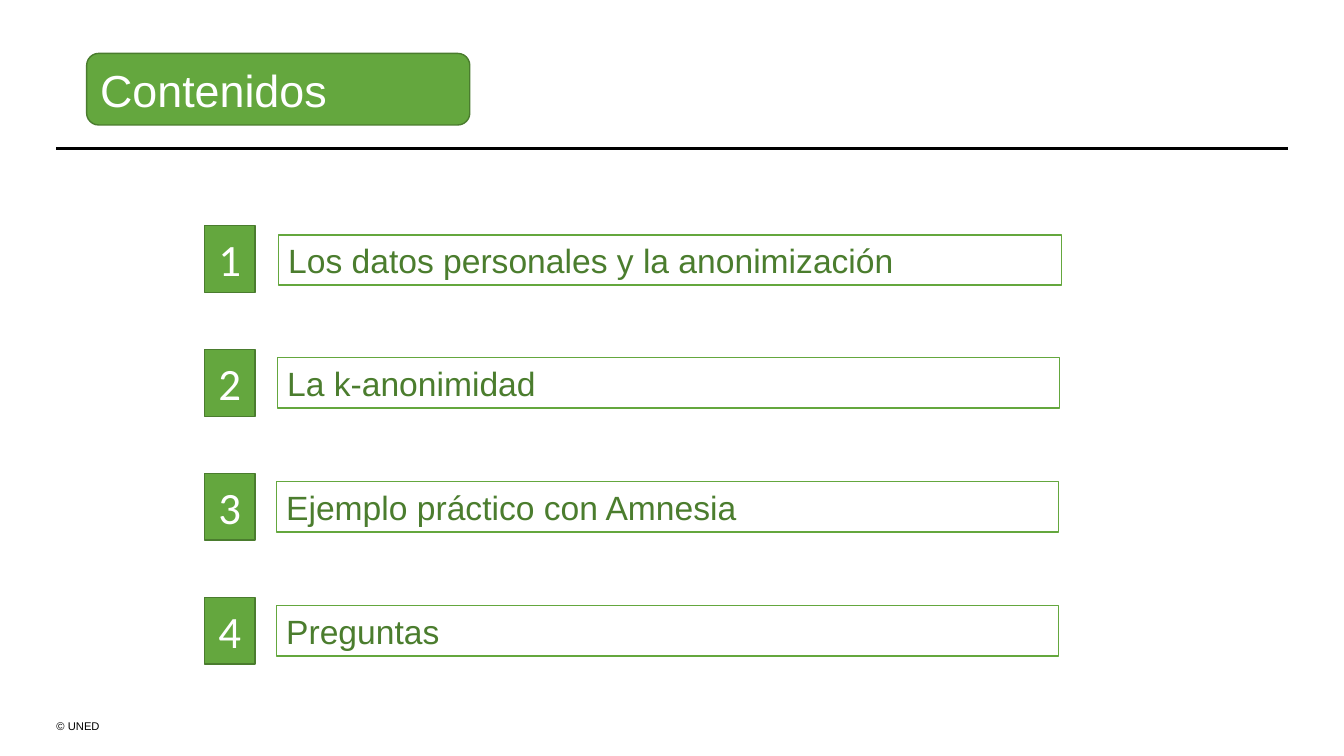
from dataclasses import dataclass

import pptx
import pptx.dml.color
import pptx.enum.shapes
import pptx.enum.text
import pptx.oxml.ns
import pptx.util
from lxml import etree
from pptx.util import Inches

Shape = pptx.enum.shapes.MSO_SHAPE
Anchor = pptx.enum.text.MSO_ANCHOR
Align = pptx.enum.text.PP_ALIGN


@dataclass(frozen=True)
class Theme:
    green: str = "64A73E"
    dark_green: str = "4A7C2E"
    topic_text: str = "4B7D2E"
    white: str = "FFFFFF"
    black: str = "000000"
    body_font: str = "Arial"
    number_font: str = "Calibri"
    title_size: int = 32
    topic_size: int = 24
    footer_size: int = 8
    border: float = 1
    rule: float = 2


THEME = Theme()

TOPICS = [
    ("Los datos personales y la anonimización", 0.73, 0.09, 7.77),
    ("La k-anonimidad", 0.72, 0.08, 7.76),
    ("Ejemplo práctico con Amnesia", 0.71, 0.08, 7.76),
    ("Preguntas", 0.71, 0.08, 7.76),
]


def rgb(color):
    return pptx.dml.color.RGBColor.from_string(color)


def write(frame, text, size, color, font=THEME.body_font, align=Align.LEFT, anchor=Anchor.TOP):
    frame.word_wrap = True
    frame.vertical_anchor = anchor
    paragraph = frame.paragraphs[0]
    paragraph.alignment = align
    run = paragraph.add_run()
    run.text = text
    run.font.name = font
    run.font.size = pptx.util.Pt(size)
    run.font.color.rgb = rgb(color)


def add_box(slide, preset, left, top, width, height, fill, border):
    box = slide.shapes.add_shape(preset, left, top, width, height)
    box.shadow.inherit = False
    box.fill.solid()
    box.fill.fore_color.rgb = rgb(fill)
    box.line.color.rgb = rgb(border)
    box.line.width = pptx.util.Pt(THEME.border)
    return box


def add_header(slide, left, top, width):
    rule_top = top + Inches(0.94)
    rule = slide.shapes.add_connector(
        pptx.enum.shapes.MSO_CONNECTOR.STRAIGHT, left, rule_top, left + width, rule_top)
    rule.line.color.rgb = rgb(THEME.black)
    rule.line.width = pptx.util.Pt(THEME.rule)
    etree.SubElement(rule._element.spPr, pptx.oxml.ns.qn("a:effectLst"))
    title = add_box(slide, Shape.ROUNDED_RECTANGLE, left + Inches(0.3), top,
                    Inches(3.8), Inches(0.71), THEME.green, THEME.dark_green)
    write(title.text_frame, "Contenidos", THEME.title_size, THEME.white, anchor=Anchor.MIDDLE)


def add_topic(slide, left, top, number, topic, indent, drop, width):
    badge = add_box(slide, Shape.RECTANGLE, left, top, Inches(0.5), Inches(0.66),
                    THEME.green, THEME.dark_green)
    write(badge.text_frame, str(number), THEME.title_size, THEME.white,
          THEME.number_font, Align.CENTER, Anchor.MIDDLE)
    label = add_box(slide, Shape.RECTANGLE, left + Inches(indent), top + Inches(drop),
                    Inches(width), Inches(0.5), THEME.white, THEME.green)
    write(label.text_frame, topic, THEME.topic_size, THEME.topic_text)


def add_agenda(slide, left, top, pitch):
    for index, (topic, indent, drop, width) in enumerate(TOPICS):
        add_topic(slide, left, top + index * pitch, index + 1, topic, indent, drop, width)


def add_footer(slide, left, top, width, height):
    footer = slide.shapes.add_textbox(left, top, width, height).text_frame
    footer.margin_left = footer.margin_right = footer.margin_top = footer.margin_bottom = 0
    write(footer, "© UNED", THEME.footer_size, THEME.black, anchor=Anchor.BOTTOM)


def main():
    deck = pptx.Presentation()
    deck.slide_width = Inches(13.33)
    deck.slide_height = Inches(7.5)
    slide = deck.slides.add_slide(deck.slide_layouts[6])
    margin = Inches(0.56)
    add_footer(slide, margin, Inches(6.87), Inches(1.97), Inches(0.4))
    add_header(slide, margin, Inches(0.53), Inches(12.21))
    add_agenda(slide, Inches(2.03), Inches(2.24), Inches(1.23))
    deck.save("out.pptx")


if __name__ == "__main__":
    main()
